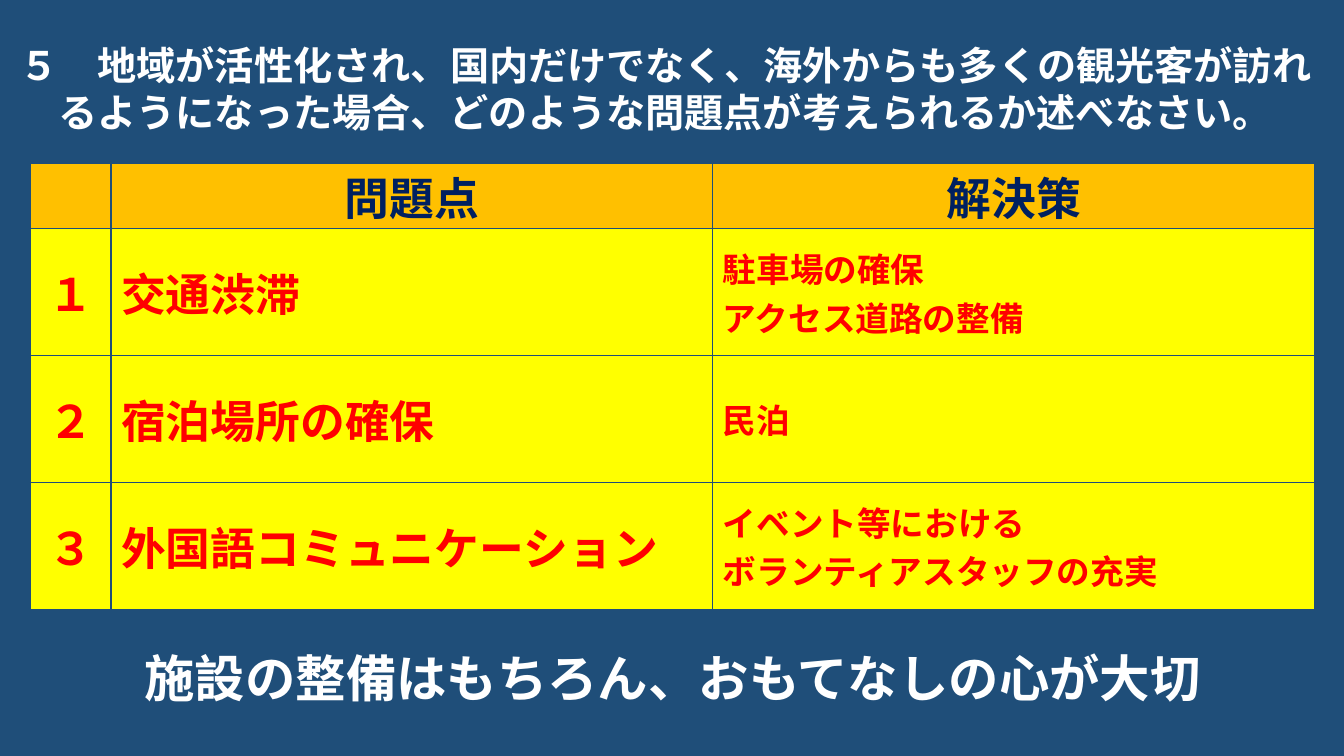
from lxml import etree
from pptx import Presentation
from pptx import util as u
from pptx.dml.color import RGBColor
from pptx.enum import text
from pptx.oxml.ns import qn

FONT = "Noto Sans CJK JP"
NAVY, WHITE, RED = "1F4E79", "FFFFFF", "FF0000"
LEFT, CENTER = text.PP_ALIGN.LEFT, text.PP_ALIGN.CENTER
MIDDLE = text.MSO_ANCHOR.MIDDLE


def paint(part, color):
    if hasattr(part, "solid"):
        part.solid()
        part = part.fore_color
    else:
        part = part.color
    part.rgb = RGBColor.from_string(color)


def write(frame, lines, size, color, align=LEFT, pitch=None):
    for i, line in enumerate(lines):
        para = frame.add_paragraph() if i else frame.paragraphs[0]
        para.alignment = align
        para.space_before = u.Pt(0)
        para.line_spacing = pitch or 1.0
        run = para.add_run()
        run.text = line
        run.font.size = u.Pt(size)
        run.font.bold = True
        run.font.name = FONT
        paint(run.font, color)
        face = etree.SubElement(run.font._element, qn("a:ea"))
        face.set("typeface", FONT)


def edge(cell, color):
    props = cell._tc.get_or_add_tcPr()
    for i, side in enumerate(("lnL", "lnR", "lnT", "lnB")):
        line = etree.Element(qn("a:" + side), w=str(u.Pt(1)))
        fill = etree.SubElement(line, qn("a:solidFill"))
        etree.SubElement(fill, qn("a:srgbClr"), val=color)
        props.insert(i, line)


def title(slide, box, lines):
    head = slide.shapes.title
    head.left, head.top, head.width, head.height = box
    frame = head.text_frame
    frame.word_wrap = True
    frame.auto_size = text.MSO_AUTO_SIZE.NONE
    frame.vertical_anchor = text.MSO_ANCHOR.BOTTOM
    frame.margin_bottom = 0
    write(frame, lines, 28, WHITE, pitch=u.Pt(33.6))


def grid(slide, box, rows):
    left, top, width, height = box
    table = slide.shapes.add_table(len(rows), 3, *box).table
    first, header = u.Cm(2.03), u.Cm(1.6)
    table.columns[0].width = first
    for i in (1, 2):
        table.columns[i].width = (width - first) // 2
    for r, row in enumerate(rows):
        table.rows[r].height = (height - header) // (len(rows) - 1) if r else header
        for c, lines in enumerate(row):
            cell = table.cell(r, c)
            cell.vertical_anchor = MIDDLE
            cell.margin_top = cell.margin_bottom = 0
            paint(cell.fill, "FFFF00" if r else "FFC000")
            edge(cell, NAVY)
            write(cell.text_frame, lines, 24 if r and c == 2 else 32,
                  RED if r else "002060", LEFT if r and c else CENTER)


def closing(slide, box, line):
    frame = slide.shapes.add_textbox(*box).text_frame
    frame.word_wrap = True
    frame.vertical_anchor = MIDDLE
    write(frame, [line], 36, WHITE, CENTER)


def main():
    deck = Presentation()
    deck.slide_width, deck.slide_height = u.Cm(33.87), u.Cm(19.05)
    slide = deck.slides.add_slide(deck.slide_layouts[5])
    paint(slide.background.fill, NAVY)
    side, wide = u.Cm(0.77), u.Cm(32.36)
    title(slide, (u.Cm(0.23), u.Cm(0.76), u.Cm(33.32), u.Cm(2.64)), [
        "５　地域が活性化され、国内だけでなく、海外からも多くの観光客が訪れ",
        "　るようになった場合、どのような問題点が考えられるか述べなさい。",
    ])
    grid(slide, (side, u.Cm(4.12), wide, u.Cm(11.2)), [
        ([], ["問題点"], ["解決策"]),
        (["１"], ["交通渋滞"], ["駐車場の確保", "アクセス道路の整備"]),
        (["２"], ["宿泊場所の確保"], ["民泊"]),
        (["３"], ["外国語コミュニケーション"],
         ["イベント等における", "ボランティアスタッフの充実"]),
    ])
    closing(slide, (side, u.Cm(16.18), wide, u.Cm(1.8)),
            "施設の整備はもちろん、おもてなしの心が大切")
    deck.save("out.pptx")


if __name__ == "__main__":
    main()
